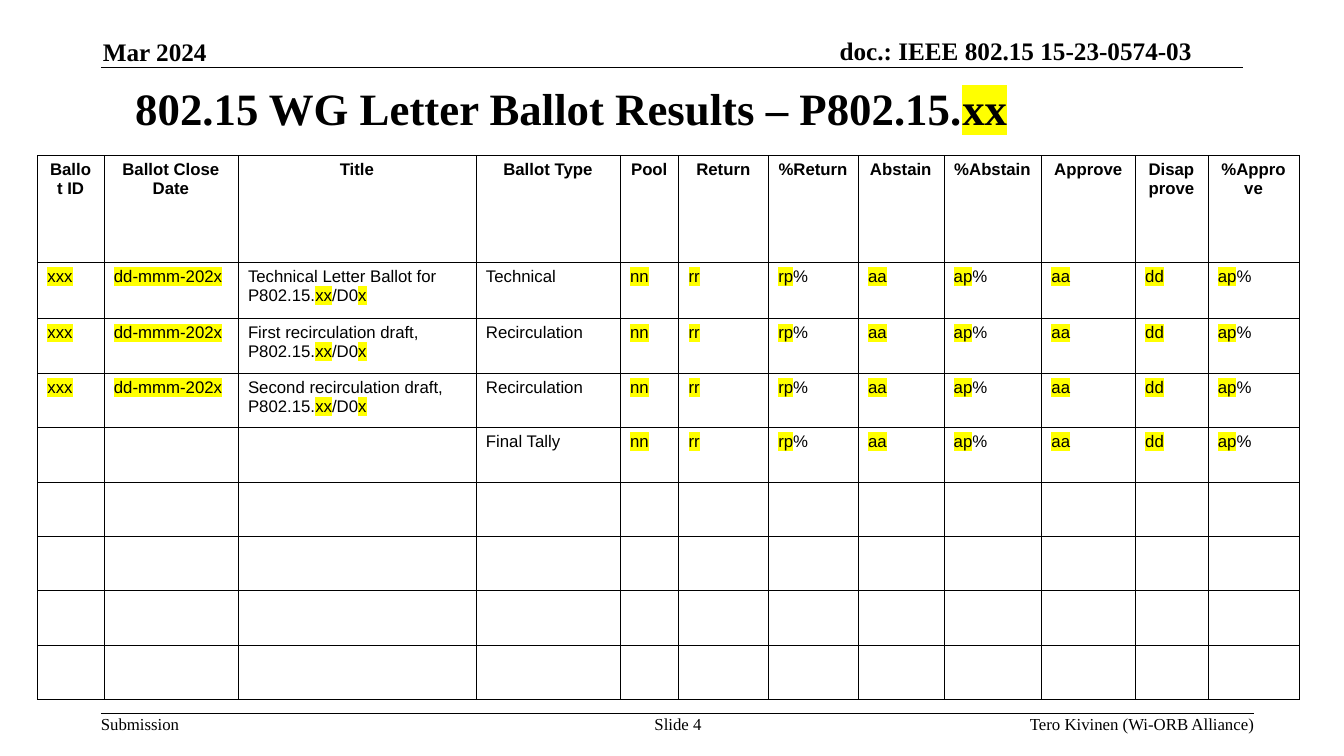
from lxml.etree import SubElement as Sub
from pptx import Presentation
from pptx.dml.color import RGBColor
from pptx.enum.shapes import MSO_CONNECTOR as Conn
from pptx.enum.text import MSO_ANCHOR as Anchor, PP_ALIGN as Align
from pptx.oxml.ns import qn
from pptx.util import Inches, Pt

BLACK = RGBColor(0, 0, 0)
YELLOW = RGBColor(255, 255, 0)
SERIF = "Times New Roman"
SANS = "Arial"

COLS = [0.66, 1.33, 2.36, 1.43, 0.58, 0.89, 0.89, 0.85, 0.97, 0.93, 0.72, 0.91]
ROWS = [1.06, 0.56] + [0.54] * 7
HEADS = ["Ballot ID", "Ballot Close Date", "Title", "Ballot Type", "Pool", "Return",
         "%Return", "Abstain", "%Abstain", "Approve", "Disapprove", "%Approve"]
COUNTS = ["*nn*", "*rr*", "*rp*%", "*aa*", "*ap*%", "*aa*", "*dd*", "*ap*%"]
BALLOTS = [("Technical Letter Ballot for", "Technical"),
           ("First recirculation draft,", "Recirculation"),
           ("Second recirculation draft,", "Recirculation")]


def write(frame, text, size, face, bold=False, align=Align.LEFT):
    para = frame.paragraphs[0]
    para.alignment = align
    for i, part in enumerate(text.split("*")):
        if not part:
            continue
        run = para.add_run()
        run.text = part
        font = run.font
        font.size, font.name, font.bold = Pt(size), face, bold
        font.color.rgb = BLACK
        if i % 2:
            props = run._r.get_or_add_rPr()
            mark = Sub(props, qn("a:highlight"))
            Sub(mark, qn("a:srgbClr")).set("val", str(YELLOW))
            props.find(qn("a:solidFill")).addnext(mark)


def label(slide, box, text, size, bold=False, align=Align.LEFT, anchor=Anchor.TOP):
    frame = slide.shapes.add_textbox(*map(Inches, box)).text_frame
    frame.word_wrap = True
    frame.vertical_anchor = anchor
    frame.margin_left = frame.margin_right = frame.margin_top = frame.margin_bottom = 0
    write(frame, text, size, SERIF, bold, align)


def rule(slide, left, top, right):
    line = slide.shapes.add_connector(
        Conn.STRAIGHT, Inches(left), Inches(top), Inches(right), Inches(top))
    line.line.color.rgb = BLACK
    line.line.width = Pt(1)
    Sub(line._element.spPr, qn("a:effectLst"))


def header(slide, left, top, width):
    rule(slide, left, top + 0.32, left + width)
    label(slide, (left + 0.02, top + 0.01, 2.73, 0.3), "Mar 2024", 18, True,
          anchor=Anchor.BOTTOM)
    label(slide, (left + width - 5.61, top, 5.1, 0.3), "doc.: IEEE 802.15 15-23-0574-03",
          18, True, Align.RIGHT, Anchor.BOTTOM)


def footer(slide, left, top, width):
    rule(slide, left, top, left + width)
    label(slide, (left, top, 0.8, 0.2), "Submission", 12)
    label(slide, (left + 5.34, top, 0.77, 0.39), "Slide 4", 12, align=Align.CENTER)
    label(slide, (left + width - 4.64, top, 4.64, 0.2), "Tero Kivinen (Wi-ORB Alliance)",
          12, align=Align.RIGHT)


def heading(slide, left, top, width, height):
    title = slide.shapes.title
    title.left, title.top = Inches(left), Inches(top)
    title.width, title.height = Inches(width), Inches(height)
    title.text_frame.vertical_anchor = Anchor.MIDDLE
    write(title.text_frame, "802.15 WG Letter Ballot Results – P802.15.*xx*",
          32, SERIF, True, Align.CENTER)


def border(cell):
    props = cell._tc.get_or_add_tcPr()
    for side in ("lnL", "lnR", "lnT", "lnB"):
        edge = Sub(props, qn("a:" + side), w=str(Pt(0.06)))
        fill = Sub(edge, qn("a:solidFill"))
        Sub(fill, qn("a:srgbClr")).set("val", str(BLACK))
    cell.fill.background()


def results(slide, left, top):
    data = [HEADS]
    for name, kind in BALLOTS:
        data.append(["*xxx*", "*dd-mmm-202x*", name + " P802.15.*xx*/D0*x*", kind] + COUNTS)
    data.append(["", "", "", "Final Tally"] + COUNTS)
    data += [[""] * len(COLS)] * (len(ROWS) - len(data))
    table = slide.shapes.add_table(
        len(ROWS), len(COLS), Inches(left), Inches(top),
        Inches(sum(COLS)), Inches(sum(ROWS))).table
    table.first_row = table.horz_banding = False
    for col, width in zip(table.columns, COLS):
        col.width = Inches(width)
    for r, (row, height) in enumerate(zip(table.rows, ROWS)):
        row.height = Inches(height)
        for cell, text in zip(row.cells, data[r]):
            border(cell)
            write(cell.text_frame, text, 12, SANS, r == 0,
                  Align.LEFT if r else Align.CENTER)


def main():
    deck = Presentation()
    deck.slide_width, deck.slide_height = Inches(13.33), Inches(7.5)
    slide = deck.slides.add_slide(deck.slide_layouts[5])
    header(slide, 1, 0.35, 11.33)
    footer(slide, 1, 7.08, 11.44)
    heading(slide, 0, 0.75, 11.33, 0.63)
    results(slide, 0.37, 1.54)
    deck.save("out.pptx")


if __name__ == "__main__":
    main()
